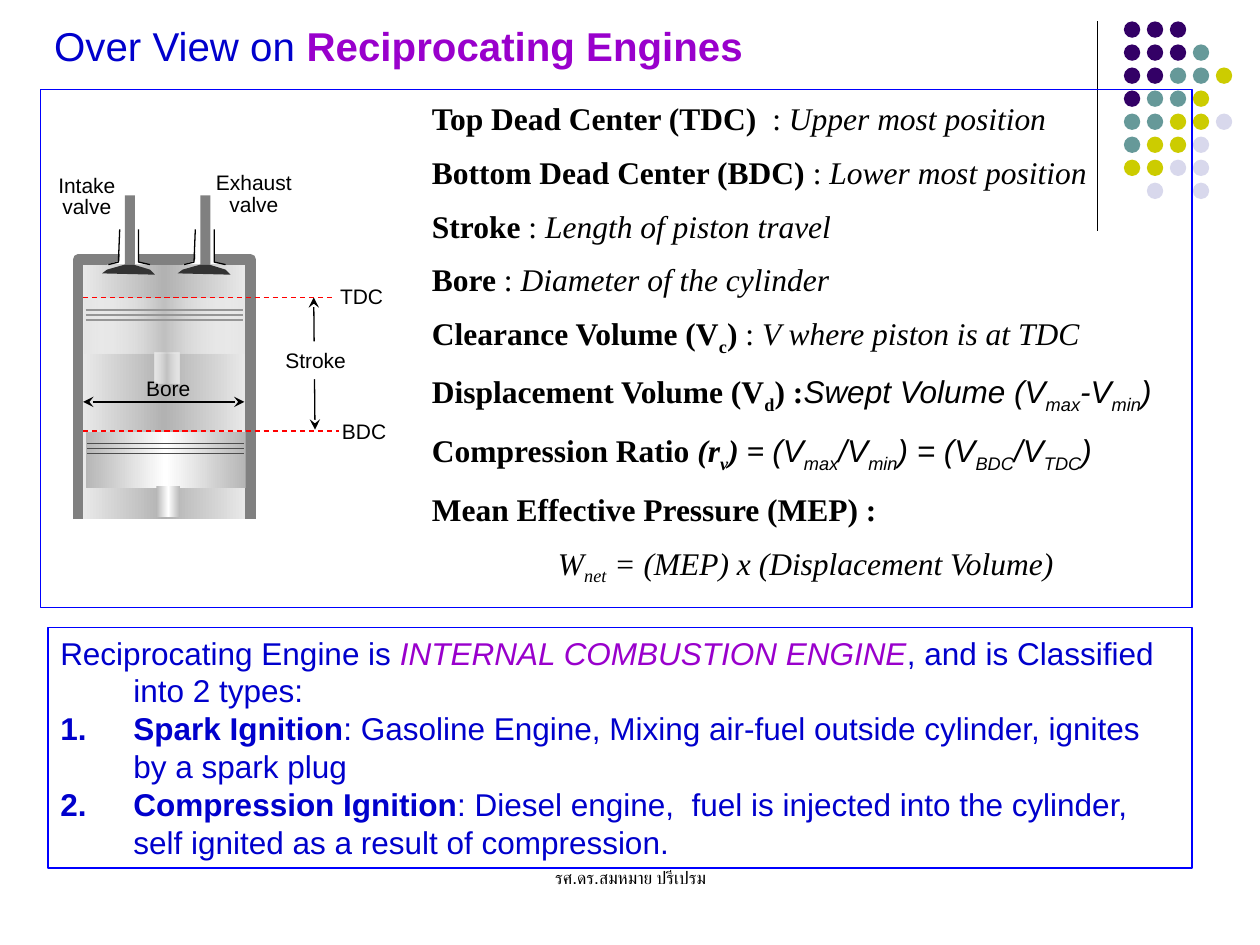
import pptx
import pptx.util
import pptx.dml.color
import pptx.enum.dml
import pptx.enum.shapes
import pptx.enum.text
import pptx.oxml
import pptx.oxml.ns

Shapes = pptx.enum.shapes.MSO_SHAPE
Align = pptx.enum.text.PP_ALIGN
Anchor = pptx.enum.text.MSO_ANCHOR
Pt = pptx.util.Pt

BLUE, PURPLE, BLACK, RED = "0000CC", "9900CC", "000000", "FF0000"
SANS, SERIF = "Arial", "Times New Roman"

# Span styles: b bold, i italic, s subscript, a sans serif, p purple
TITLE = [("Over View on ", ""), ("Reciprocating Engines", "bp")]
DEFINITIONS = [
    [("Top Dead Center (TDC)", "b"), ("  : ", ""), ("Upper most position", "i")],
    [("Bottom Dead Center (BDC)", "b"), (" : ", ""), ("Lower most position", "i")],
    [("Stroke", "b"), (" : ", ""), ("Length of piston travel", "i")],
    [("Bore", "b"), (" : ", ""), ("Diameter of the cylinder", "i")],
    [("Clearance Volume (V", "b"), ("c", "bs"), (")", "b"), (" : ", ""),
     ("V where piston is at TDC", "i")],
    [("Displacement Volume (V", "b"), ("d", "bs"), (") :", "b"), ("Swept Volume (V", "ai"),
     ("max", "ais"), ("-V", "ai"), ("min", "ais"), (")", "ai")],
    [("Compression Ratio ", "b"), ("(r", "bi"), ("v", "bis"), (") = ", "bi"), ("(V", "ai"),
     ("max", "ais"), ("/V", "ai"), ("min", "ais"), (") = (V", "ai"), ("BDC", "ais"),
     ("/V", "ai"), ("TDC", "ais"), (")", "ai")],
    [("Mean Effective Pressure (MEP) :", "b")],
    [("W", "i"), ("net", "is"), (" = (MEP) x (Displacement Volume)", "i")],
]
TYPES = [
    [("Reciprocating Engine is ", ""), ("INTERNAL COMBUSTION ENGINE", "ip"),
     (", and is Classified into 2 types:", "")],
    [("Spark Ignition", "b"),
     (": Gasoline Engine, Mixing air-fuel outside cylinder, ignites by a spark plug", "")],
    [("Compression Ignition", "b"),
     (": Diesel engine,  fuel is injected into the cylinder, "
      "self ignited as a result of compression.", "")],
]
FOOTER = "รศ.ดร.สมหมาย ปรีเปรม"
DOT_ROWS = ["PPP", "PPPT", "PPTTY", "PTTY", "TTYYL", "TYYL", "YYLL", " L L"]
DOT_COLORS = {"P": "330066", "T": "669999", "Y": "CCCC00", "L": "D8D8EC"}
LABELS = [  # text, left, top, width, height in inches
    ("TDC", 2.59, 2.2, 0.56, 0.3),
    ("BDC", 2.61, 3.27, 0.56, 0.3),
    ("Intake\nvalve", 0.31, 1.35, 0.76, 0.44),
    ("Exhaust\nvalve", 1.59, 1.33, 0.85, 0.44),
]
VALVE_OFFSETS = (0, 0.6)


def inches(*values):
    return [pptx.util.Cm(value * 2.54) for value in values]


def color(hex_code):
    return pptx.dml.color.RGBColor.from_string(hex_code)


def paint(shape, fill=None, line=None, width=0.75):
    shape.shadow.inherit = False
    if fill:
        shape.fill.solid()
        shape.fill.fore_color.rgb = color(fill)
    else:
        shape.fill.background()
    if line:
        shape.line.color.rgb = color(line)
        shape.line.width = Pt(width)
    else:
        shape.line.fill.background()


def add_block(kind, place, fill=None, line=None):
    shape = slide.shapes.add_shape(kind, *inches(*place))
    paint(shape, fill, line)
    return shape


def add_outline(points, fill=None, line=None, width=0.75, dx=0):
    points = [inches(x + dx, y) for x, y in points]
    builder = slide.shapes.build_freeform(*points[0], scale=1.0)
    builder.add_line_segments(points[1:], close=line is None)
    shape = builder.convert_to_shape()
    paint(shape, fill, line, width)
    return shape


def shade(shape, edge, middle, opacity=100):
    """Fill with a horizontal gradient that is symmetric about the middle."""
    shape.fill.gradient()
    shape.fill.gradient_angle = 0
    stops = shape.fill._fill._gradFill.find(pptx.oxml.ns.qn("a:gsLst"))
    for stop in list(stops):
        stops.remove(stop)
    for place, tone, alpha in ((0, edge, 100), (50, middle, opacity), (100, edge, 100)):
        stops.append(pptx.oxml.parse_xml(
            f'<a:gs {pptx.oxml.ns.nsdecls("a")} pos="{place * 1000}"><a:srgbClr val="{tone}">'
            f'<a:alpha val="{alpha * 1000}"/></a:srgbClr></a:gs>'))


def add_line(x1, y1, x2, y2, tone=BLACK, dashed=False, arrows=False):
    line = slide.shapes.add_connector(
        pptx.enum.shapes.MSO_CONNECTOR.STRAIGHT, *inches(x1, y1, x2, y2))
    line.line.color.rgb = color(tone)
    line.line.width = Pt(0.75)
    if dashed:
        line.line.dash_style = pptx.enum.dml.MSO_LINE.DASH
    if arrows:
        for end in ("headEnd", "tailEnd"):
            line.line._get_or_add_ln().append(pptx.oxml.parse_xml(
                f'<a:{end} {pptx.oxml.ns.nsdecls("a")} type="stealth"/>'))
    line._element.spPr.append(
        pptx.oxml.parse_xml(f'<a:effectLst {pptx.oxml.ns.nsdecls("a")}/>'))


def write(frame, paragraphs, size, tone, font):
    frame.word_wrap = True
    for index, spans in enumerate(paragraphs):
        para = frame.add_paragraph() if index else frame.paragraphs[0]
        para.alignment = Align.LEFT
        for text, style in spans:
            span = para.add_run()
            span.text = text
            span.font.size = Pt(size)
            span.font.name = SANS if "a" in style else font
            span.font.bold = "b" in style
            span.font.italic = "i" in style
            span.font.color.rgb = color(PURPLE if "p" in style else tone)
            if "s" in style:
                span.font._element.set("baseline", "-25000")


def indent(para, margin, first_line=0):
    properties = para._p.get_or_add_pPr()
    for name, value in zip(("marL", "indent"), inches(margin, first_line)):
        properties.set(name, str(int(value)))
    return properties


def add_label(text, *place, size=12):
    box = slide.shapes.add_textbox(*inches(*place))
    frame = box.text_frame
    lines = text.split("\n")
    write(frame, [[(line, "")] for line in lines], size, BLACK, SANS)
    frame.margin_left = frame.margin_right = 0
    for para in frame.paragraphs:
        para.alignment = Align.CENTER
        if len(lines) > 1:
            para.line_spacing = 0.85
    return box


def add_piston(left, top, edge, ring, opacity=100):
    for place in ((left, top, 1.27, 0.44), (left + 0.56, top + 0.43, 0.19, 0.24)):
        shade(add_block(Shapes.RECTANGLE, place), edge, "FFFFFF", opacity)
    for drop in (0.09, 0.13, 0.17):
        add_line(left + 0.01, top + drop, left + 1.26, top + drop, ring)


def add_valve(dx):
    add_outline([(0.85, 2.1), (0.95, 2.07), (0.96, 1.79), (1.1, 1.79), (1.1, 2.08),
                 (1.18, 2.1)], fill="FFFFFF", dx=dx)
    add_outline([(0.86, 2.1), (0.94, 2.08), (0.95, 1.82)], line=BLACK, dx=dx)
    add_outline([(1.19, 2.1), (1.1, 2.08), (1.1, 1.82)], line=BLACK, dx=dx)
    add_block(Shapes.RECTANGLE, (0.99 + dx, 1.55, 0.08, 0.55), "808080")
    add_outline([(0.81, 2.17), (1.23, 2.18), (1.19, 2.14), (1.06, 2.1), (0.99, 2.1),
                 (0.85, 2.14)], fill="333333", dx=dx)


deck = pptx.Presentation()
deck.slide_width, deck.slide_height = inches(10, 7.5)
slide = deck.slides.add_slide(deck.slide_layouts[5])

# Corner decoration
add_line(8.71, 0.17, 8.71, 1.83)
for row, dots in enumerate(DOT_ROWS):
    for column, dot in enumerate(dots):
        if dot in DOT_COLORS:
            place = (8.92 + column * 0.73 / 4, 0.17 + row * 1.28 / 7, 0.13, 0.13)
            add_block(Shapes.OVAL, place, DOT_COLORS[dot])

title = slide.shapes.title
title.left, title.top, title.width, title.height = inches(0.33, 0.15, 8.05, 0.45)
write(title.text_frame, [TITLE], 23, BLUE, SANS)
title.text_frame.vertical_anchor = Anchor.BOTTOM
add_label(FOOTER, 3.42, 6.83, 3.17, 0.5, size=10)

# Engine drawing
cylinder = add_outline([(0.62, 4.12), (0.62, 2.06), (1.99, 2.06), (1.99, 4.12)],
                       line="808080", width=6)
shade(cylinder, "ECECEC", "B2B2B2")
add_piston(0.68, 3.43, "B6B6B6", "4D4D4D")
for offset in VALVE_OFFSETS:
    add_valve(offset)
add_line(0.66, 3.19, 1.94, 3.19, arrows=True)
add_label("Bore", 0.99, 2.93, 0.69, 0.3)
add_line(2.49, 2.36, 2.5, 3.41, arrows=True)
stroke = add_label("Stroke", 2.15, 2.71, 0.71, 0.3)
stroke.fill.solid()
stroke.fill.fore_color.rgb = color("FFFFFF")
for label in LABELS:
    add_label(*label)
add_piston(0.67, 2.37, "E6E6E6", "969696", opacity=18)
add_line(0.66, 2.36, 2.66, 2.36, RED, dashed=True)
add_line(0.66, 3.42, 2.69, 3.42, RED, dashed=True)

# Definitions
definitions = slide.shapes.add_textbox(*inches(3.33, 0.74, 6.09, 4.01))
write(definitions.text_frame, DEFINITIONS, 18, BLACK, SERIF)
for para in definitions.text_frame.paragraphs[1:]:
    para.space_before = Pt(9)
indent(definitions.text_frame.paragraphs[-1], 1)
add_block(Shapes.RECTANGLE, (0.32, 0.71, 9.14, 4.11), line="0000FF")

# Engine types
types = add_block(Shapes.RECTANGLE, (0.38, 4.98, 9.08, 1.91), line="0000FF")
types.text_frame.vertical_anchor = Anchor.TOP
write(types.text_frame, TYPES, 18, BLUE, SANS)
for index, para in enumerate(types.text_frame.paragraphs):
    properties = indent(para, 0.58, -0.58)
    if index:
        properties.append(pptx.oxml.parse_xml(
            f'<a:buAutoNum {pptx.oxml.ns.nsdecls("a")} type="arabicPeriod"/>'))

deck.save("out.pptx")
